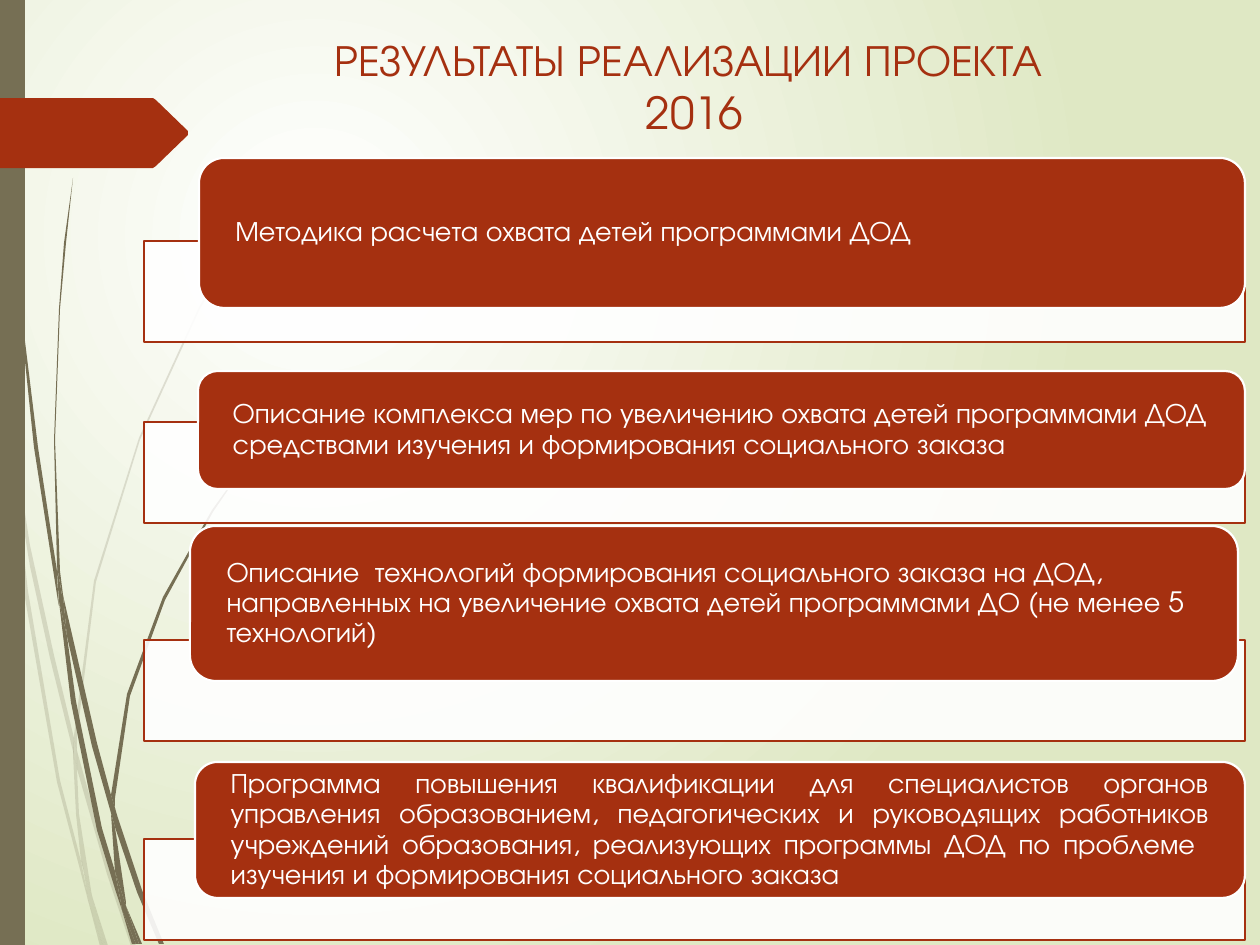
from dataclasses import dataclass

from lxml.etree import SubElement
from pptx import Presentation
from pptx.dml.color import RGBColor as RGB
from pptx.enum.shapes import MSO_SHAPE as SHAPE
from pptx.enum.text import MSO_ANCHOR as ANCHOR, PP_ALIGN as ALIGN
from pptx.oxml.ns import qn
from pptx.util import Emu, Pt

PX = 914400 // 126
WIDTH, HEIGHT = 1260, 945


@dataclass(frozen=True)
class Theme:
    accent: str = "A53010"
    stem: str = "766F54"
    paper: str = "FFFFFF"
    tint: str = "DFE8C4"
    font: str = "TeX Gyre Adventor"
    title_size: float = 25.2
    body_size: float = 16
    line_width: float = 1.25


THEME = Theme()
PANEL = dict(x=144, w=1101, h=101)
RIGHT = PANEL["x"] + PANEL["w"]

TITLE = "РЕЗУЛЬТАТЫ РЕАЛИЗАЦИИ ПРОЕКТА \v2016"
RESULTS = [
    (241, (199, 158, RIGHT - 199, 150), ALIGN.LEFT,
     "Методика расчета охвата детей программами ДОД"),
    (422, (198, 371, RIGHT - 198, 118), ALIGN.LEFT,
     "Описание комплекса мер по увеличению охвата детей программами ДОД "
     "средствами изучения и формирования социального заказа"),
    (640, (190, 526, 1048, 155), ALIGN.LEFT,
     "Описание  технологий формирования социального заказа на ДОД, "
     "направленных на увеличение охвата детей программами ДО (не менее 5 технологий)"),
    (839, (195, 762, RIGHT - 195, 136), ALIGN.JUSTIFY,
     "Программа повышения квалификации для специалистов органов управления "
     "образованием, педагогических и руководящих работников учреждений образования, "
     "реализующих программы ДОД по проблеме  изучения и формирования социального заказа"),
]

TAG = [(188, 135), (156, 166), (153, 168), (0, 168), (0, 98), (153, 98), (156, 100), (188, 131)]
PALE_STEMS = [
    [(10, 441), (8, 406), (0, 355), (0, 377), (9, 433)],
    [(50, 658), (74, 755), (74, 738), (54, 655), (30, 545), (13, 435), (15, 474), (30, 566)],
    [(81, 765), (77, 751), (77, 769), (107, 874), (131, 946), (136, 946), (111, 872)],
    [(105, 946), (108, 946), (92, 896)],
    [(81, 861), (60, 780), (28, 591), (15, 474), (10, 441), (24, 592), (57, 782),
     (81, 873), (88, 900), (87, 891)],
    [(73, 755), (76, 814), (81, 861), (84, 872), (92, 896), (91, 890), (79, 814),
     (77, 769), (77, 766)],
    [(77, 736), (96, 582), (140, 440), (200, 309), (236, 249), (253, 221), (273, 194),
     (273, 193), (253, 220), (234, 248), (199, 307), (139, 438), (94, 581), (74, 736),
     (74, 738), (77, 751)],
    [(88, 900), (100, 946), (103, 946)],
    [(77, 766), (77, 769), (77, 751), (74, 738), (73, 755)],
    [(84, 872), (82, 861), (87, 891), (88, 900), (103, 946), (105, 946), (92, 896)],
]
DARK_STEMS = [
    [(6, 139), (18, 294), (34, 447), (58, 601), (59, 606), (57, 576), (57, 571),
     (38, 447), (19, 292), (8, 137), (5, 60), (4, 0), (3, 0), (4, 60)],
    [(92, 746), (111, 813), (111, 798), (111, 795), (97, 743), (63, 595), (67, 636)],
    [(118, 818), (115, 808), (115, 827), (137, 892), (159, 944), (164, 944), (142, 890)],
    [(115, 871), (102, 828), (76, 701), (67, 636), (59, 601), (71, 702), (97, 830),
     (116, 892), (122, 910), (121, 903)],
    [(63, 595), (60, 571), (55, 440), (60, 309), (66, 243), (73, 178), (64, 243),
     (59, 309), (54, 440), (57, 566), (62, 595)],
    [(139, 944), (142, 944), (126, 906)],
    [(59, 601), (67, 636), (63, 595), (62, 595), (57, 566), (57, 571)],
    [(115, 798), (130, 696), (165, 600), (213, 512), (241, 471), (256, 452), (272, 433),
     (271, 433), (256, 451), (241, 470), (212, 510), (163, 597), (127, 694), (111, 795),
     (115, 808)],
    [(122, 910), (132, 944), (136, 944)],
    [(111, 813), (115, 871), (121, 890), (126, 906), (126, 902), (115, 827), (113, 820)],
    [(111, 813), (113, 820), (115, 827), (115, 808), (111, 795), (111, 798)],
    [(121, 890), (115, 871), (121, 903), (122, 910), (136, 944), (139, 944), (126, 906)],
]


def write(tf, text, *, size, color, align=ALIGN.LEFT, spacing=1.0):
    """Write one formatted paragraph into a text frame, centred vertically."""
    tf.word_wrap = True
    tf.vertical_anchor = ANCHOR.MIDDLE
    tf.text = text
    p = tf.paragraphs[0]
    p.alignment, p.line_spacing = align, spacing
    for r in p.runs:
        r.font.name, r.font.size = THEME.font, Pt(size)
        r.font.color.rgb = RGB.from_string(color)


class Deck:
    """Hold the theme and the current slide, and draw each kind of element."""

    def __init__(self, prs, theme):
        self.theme = theme
        self.s = prs.slides.add_slide(prs.slide_layouts[5])

    def background(self):
        """Fill the slide with a circular gradient."""
        fill = self.s.background.fill
        fill.gradient()
        for stop, color in zip(fill.gradient_stops, (self.theme.paper, self.theme.tint)):
            stop.color.rgb = RGB.from_string(color)
        grad = next(self.s.element.iter(qn("a:gradFill")))
        grad.remove(grad.find(qn("a:lin")))
        circle = SubElement(grad, qn("a:path"), {"path": "circle"})
        SubElement(circle, qn("a:fillToRect"),
                   {"l": "50000", "t": "50000", "r": "100000", "b": "100000"})

    def paint(self, sp, fill, line=None, alpha=100):
        """Set the fill, its opacity and the outline of a shape."""
        sp.shadow.inherit = False
        sp.fill.solid()
        sp.fill.fore_color.rgb = RGB.from_string(fill)
        if alpha < 100:
            color = sp.element.spPr.find(qn("a:solidFill"))[0]
            SubElement(color, qn("a:alpha"), {"val": str(alpha * 1000)})
        if line:
            sp.line.color.rgb = RGB.from_string(line)
            sp.line.width = Pt(self.theme.line_width)
        else:
            sp.line.fill.background()

    def shape(self, kind, x, y, w, h, fill, line=None, alpha=100):
        """Add a painted preset shape."""
        sp = self.s.shapes.add_shape(kind, *(Emu(v * PX) for v in (x, y, w, h)))
        self.paint(sp, fill, line, alpha)
        return sp

    def outline(self, points, fill, alpha=100):
        """Add a filled freeform through the given points."""
        builder = self.s.shapes.build_freeform(*points[0], scale=PX)
        builder.add_line_segments(points[1:], close=True)
        self.paint(builder.convert_to_shape(), fill, alpha=alpha)

    def title(self, text, x, y, w, h):
        """Place and format the title."""
        sp = self.s.shapes.title
        sp.left, sp.top, sp.width, sp.height = (Emu(v * PX) for v in (x, y, w, h))
        write(sp.text_frame, text, size=self.theme.title_size,
              color=self.theme.accent, align=ALIGN.CENTER)

    def result(self, panel_y, box, align, text):
        """Add a result card over its outlined panel."""
        t = self.theme
        self.shape(SHAPE.RECTANGLE, PANEL["x"], panel_y, PANEL["w"], PANEL["h"],
                   t.paper, t.accent, alpha=90)
        tf = self.shape(SHAPE.ROUNDED_RECTANGLE, *box, t.accent, t.paper).text_frame
        tf.margin_left = tf.margin_right = Emu(29 * PX)
        tf.margin_top = tf.margin_bottom = 0
        write(tf, text, size=t.body_size, color=t.paper, align=align, spacing=0.9)


def main():
    """Build and save the slide."""
    prs = Presentation()
    prs.slide_width, prs.slide_height = Emu(WIDTH * PX), Emu(HEIGHT * PX)
    deck = Deck(prs, THEME)
    deck.background()
    for points in PALE_STEMS:
        deck.outline(points, THEME.stem, alpha=20)
    for points in DARK_STEMS:
        deck.outline(points, THEME.stem)
    deck.shape(SHAPE.RECTANGLE, 0, 0, 25, HEIGHT, THEME.stem)
    deck.outline(TAG, THEME.accent)
    deck.title(TITLE, 184, 26, 1021, 118)
    for result in RESULTS:
        deck.result(*result)
    prs.save("out.pptx")


if __name__ == "__main__":
    main()
